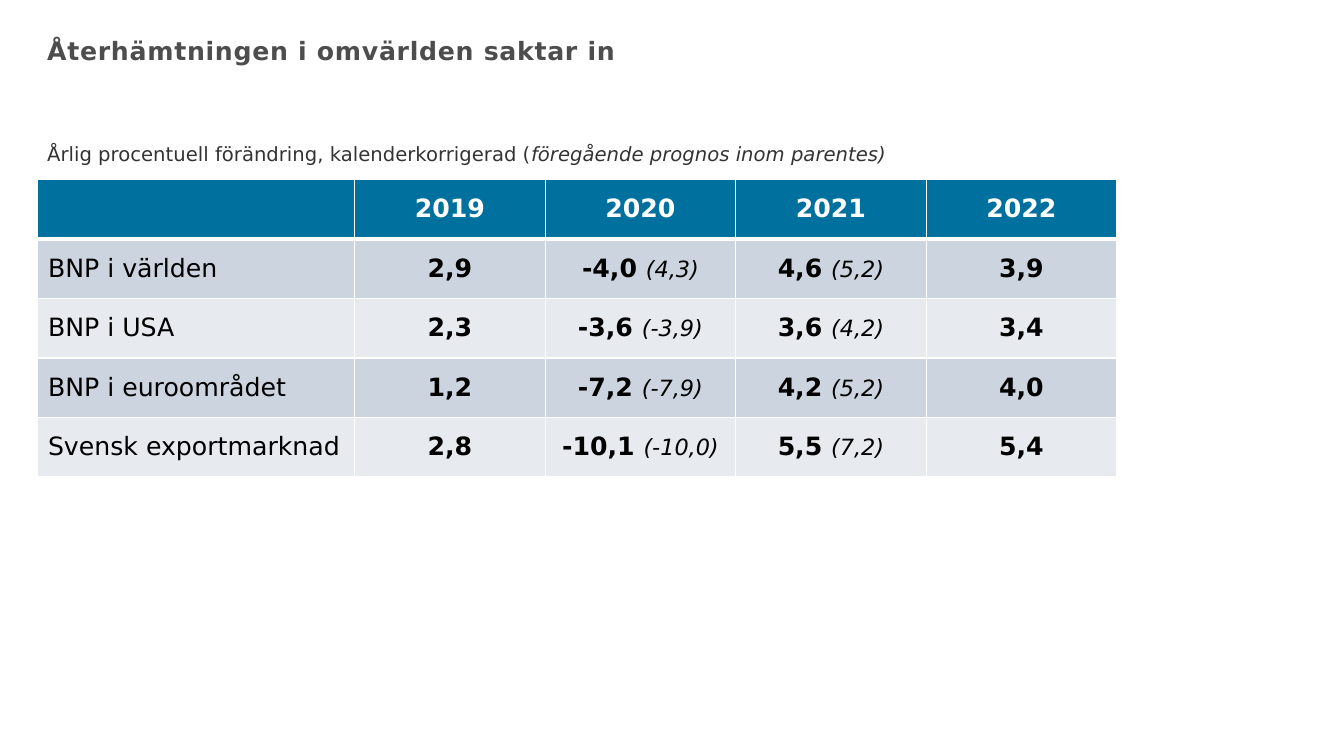
"""Build a slide with a table of GDP growth forecasts abroad."""
from dataclasses import dataclass

from lxml import etree
from pptx import Presentation
from pptx.dml.color import RGBColor
from pptx.enum.text import MSO_ANCHOR, PP_ALIGN
from pptx.oxml.ns import qn
from pptx.util import Cm, Pt

TOP, MIDDLE, BOTTOM = MSO_ANCHOR.TOP, MSO_ANCHOR.MIDDLE, MSO_ANCHOR.BOTTOM
LEFT, CENTER = PP_ALIGN.LEFT, PP_ALIGN.CENTER

TITLE = "Återhämtningen i omvärlden saktar in"
UNIT = "Årlig procentuell förändring, kalenderkorrigerad ("
UNIT_NOTE = "föregående prognos inom parentes)"
YEARS = ["2019", "2020", "2021", "2022"]
FORECASTS = [
    ("BNP i världen", ["2,9", ("-4,0", "(4,3)"), ("4,6", "(5,2)"), "3,9"]),
    ("BNP i USA", ["2,3", ("-3,6", "(-3,9)"), ("3,6", "(4,2)"), "3,4"]),
    ("BNP i euroområdet", ["1,2", ("-7,2", "(-7,9)"), ("4,2", "(5,2)"), "4,0"]),
    ("Svensk exportmarknad", ["2,8", ("-10,1", "(-10,0)"), ("5,5", "(7,2)"), "5,4"]),
]


@dataclass(frozen=True)
class Theme:
    font: str = "DejaVu Sans"
    title: str = "4D4D4D"
    unit: str = "333333"
    body: str = "000000"
    white: str = "FFFFFF"
    header: str = "00709E"
    bands: tuple = ("CCD5DF", "E7EBF0")
    large: int = 18
    previous: int = 16
    small: int = 14
    rule: int = 1
    header_rule: int = 3


THEME = Theme()
SLIDE_WIDTH, SLIDE_HEIGHT = 33.87, 19.05
MARGIN = 0.94
TITLE_TOP, UNIT_TOP, TABLE_TOP = 0.76, 2.9, 4.52
TEXT_WIDTH, TEXT_HEIGHT = 24.05, 1.4
LABEL_WIDTH, YEAR_WIDTH, ROW_HEIGHT = 8, 4.8, 1.5
INSET_X, INSET_Y = 0.27, 0.13


def add_run(paragraph, text, size, color, bold=False, italic=False):
    run = paragraph.add_run()
    run.text = text
    font = run.font
    font.name, font.size = THEME.font, Pt(size)
    font.bold, font.italic = bold, italic
    font.color.rgb = RGBColor.from_string(color)
    return run


def add_line(slide, top, anchor):
    box = slide.shapes.add_textbox(Cm(MARGIN), Cm(top), Cm(TEXT_WIDTH), Cm(TEXT_HEIGHT))
    frame = box.text_frame
    frame.word_wrap = True
    frame.vertical_anchor = anchor
    return frame.paragraphs[0]


def add_borders(cell, top, bottom):
    properties = cell._tc.get_or_add_tcPr()
    widths = {"a:lnL": THEME.rule, "a:lnR": THEME.rule, "a:lnT": top, "a:lnB": bottom}
    for side, width in widths.items():
        line = etree.SubElement(properties, qn(side), w=str(Pt(width)))
        fill = etree.SubElement(line, qn("a:solidFill"))
        etree.SubElement(fill, qn("a:srgbClr"), val=THEME.white)


def style_cell(cell, row, column):
    add_borders(
        cell,
        THEME.header_rule if row == 1 else THEME.rule,
        THEME.header_rule if row == 0 else THEME.rule,
    )
    cell.fill.solid()
    color = THEME.bands[(row - 1) % 2] if row else THEME.header
    cell.fill.fore_color.rgb = RGBColor.from_string(color)
    cell.vertical_anchor = MIDDLE
    cell.margin_left = cell.margin_right = Cm(INSET_X)
    cell.margin_top = cell.margin_bottom = Cm(INSET_Y)
    cell.text_frame.paragraphs[0].alignment = CENTER if column else LEFT


def add_forecast_table(slide):
    rows = [("", YEARS), *FORECASTS]
    width = LABEL_WIDTH + YEAR_WIDTH * len(YEARS)
    table = slide.shapes.add_table(
        len(rows), len(YEARS) + 1, Cm(MARGIN), Cm(TABLE_TOP), Cm(width), Cm(ROW_HEIGHT * len(rows))
    ).table
    for column, part in enumerate(table.columns):
        part.width = Cm(YEAR_WIDTH if column else LABEL_WIDTH)
    for row, (label, values) in enumerate(rows):
        table.rows[row].height = Cm(ROW_HEIGHT)
        color = THEME.body if row else THEME.white
        for column, value in enumerate([label, *values]):
            cell = table.cell(row, column)
            style_cell(cell, row, column)
            paragraph = cell.text_frame.paragraphs[0]
            if isinstance(value, tuple):
                current, previous = value
                add_run(paragraph, current + " ", THEME.large, color, bold=True)
                add_run(paragraph, previous, THEME.previous, color, italic=True)
            elif value:
                add_run(paragraph, value, THEME.large, color, bold=column > 0)


def main():
    deck = Presentation()
    deck.slide_width, deck.slide_height = Cm(SLIDE_WIDTH), Cm(SLIDE_HEIGHT)
    slide = deck.slides.add_slide(deck.slide_layouts[6])

    heading = add_run(add_line(slide, TITLE_TOP, TOP), TITLE, THEME.large, THEME.title, bold=True)
    heading.font._element.set("spc", "50")

    add_forecast_table(slide)

    unit_line = add_line(slide, UNIT_TOP, BOTTOM)
    add_run(unit_line, UNIT, THEME.small, THEME.unit)
    add_run(unit_line, UNIT_NOTE, THEME.small, THEME.unit, italic=True)

    deck.save("out.pptx")


if __name__ == "__main__":
    main()
